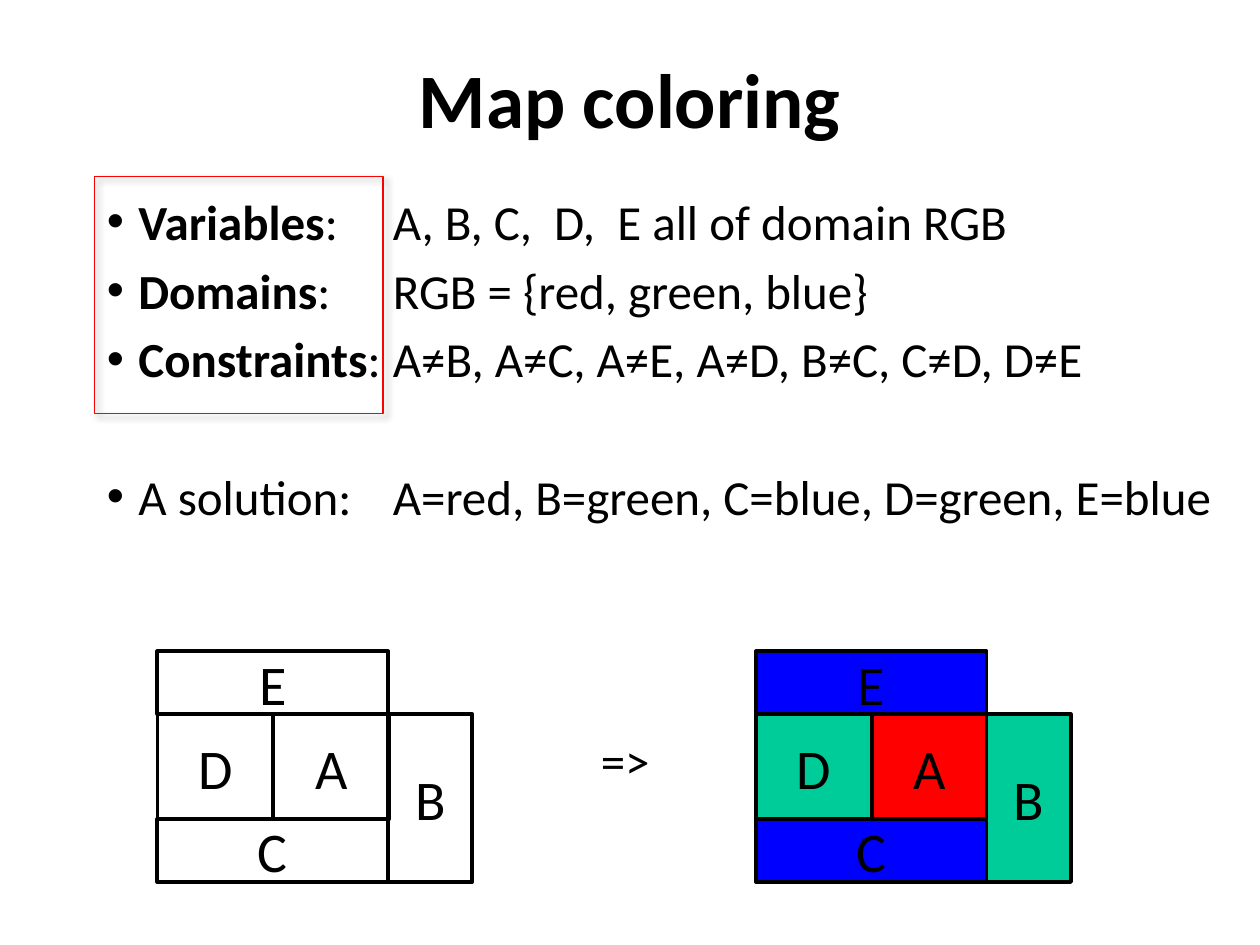
from lxml.etree import SubElement
from pptx import Presentation
from pptx.dml.color import RGBColor
from pptx.enum.shapes import MSO_SHAPE
from pptx.enum.text import MSO_ANCHOR, PP_ALIGN
from pptx.oxml.ns import qn
from pptx.util import Inches, Pt

REGIONS = [
    ("E", 0, 0, 1.83, 0.5),
    ("D", 0, 0.5, 0.92, 0.83),
    ("A", 0.92, 0.5, 0.92, 0.83),
    ("C", 0, 1.33, 1.83, 0.5),
    ("B", 1.83, 0.5, 0.67, 1.33),
]
SOLUTION = {"A": "FF0000", "B": "00CC99", "C": "0000FF", "D": "00CC99", "E": "0000FF"}
FACTS = [
    ("Variables", ":", "A, B, C,  D,  E all of domain RGB", 5.6),
    ("Domains", ":", "RGB = {red, green, blue}", 5.6),
    ("Constraints", ":", "A≠B, A≠C, A≠E, A≠D, B≠C, C≠D, D≠E", 5.6),
    ("", "A solution:", "A=red, B=green, C=blue, D=green, E=blue", 45),
]


def color(value):
    """Turn a hex string into a colour."""
    return RGBColor.from_string(value)


def add_run(p, text, size, bold=False):
    """Append one black Calibri run to a paragraph."""
    r = p.add_run()
    r.text = text
    r.font.name = "Calibri"
    r.font.size = Pt(size)
    r.font.bold = bold
    r.font.color.rgb = color("000000")


def add_text_box(s, x, y, w, h, wrap=True):
    """Add an empty text box and return its text frame."""
    tf = s.shapes.add_textbox(Inches(x), Inches(y), Inches(w), Inches(h)).text_frame
    tf.word_wrap = wrap
    return tf


def format_bullet(p):
    """Give a paragraph a hanging bullet and a tab stop for its value."""
    pPr = p._p.get_or_add_pPr()
    pPr.set("marL", str(Inches(0.25)))
    pPr.set("indent", str(Inches(-0.25)))
    SubElement(pPr, qn("a:buFont"), typeface="Arial")
    SubElement(pPr, qn("a:buChar"), char="•")
    tabs = SubElement(pPr, qn("a:tabLst"))
    SubElement(tabs, qn("a:tab"), pos=str(Inches(2.27)), algn="l")


def add_facts(s):
    """Add the bulleted problem definition and its solution."""
    tf = add_text_box(s, 0.75, 1.47, 9.11, 4.5)
    for i, (term, label, value, space) in enumerate(FACTS):
        p = tf.add_paragraph() if i else tf.paragraphs[0]
        p.space_before = Pt(space)
        format_bullet(p)
        if term:
            add_run(p, term, 28, bold=True)
        add_run(p, f"{label}\t{value}", 28)


def add_rect(shapes, x, y, w, h, line, width, fill=None):
    """Add an outlined rectangle, hollow unless a fill is given."""
    sp = shapes.add_shape(MSO_SHAPE.RECTANGLE, Inches(x), Inches(y), Inches(w), Inches(h))
    sp.shadow.inherit = False
    sp.line.color.rgb = color(line)
    sp.line.width = Pt(width)
    if fill:
        sp.fill.solid()
        sp.fill.fore_color.rgb = color(fill)
    else:
        sp.fill.background()
    return sp


def add_map(s, left, top, fills):
    """Add the five-region map as a group."""
    group = s.shapes.add_group_shape()
    for name, x, y, w, h in REGIONS:
        sp = add_rect(group.shapes, left + x, top + y, w, h, "000000", 2.25, fills.get(name))
        tf = sp.text_frame
        tf.word_wrap = False
        tf.vertical_anchor = MSO_ANCHOR.MIDDLE
        p = tf.paragraphs[0]
        p.alignment = PP_ALIGN.CENTER
        add_run(p, name, 32)


def add_shadow(sp):
    """Give a shape a soft outer shadow to the lower right."""
    effects = sp._element.spPr.find(qn("a:effectLst"))
    shadow = SubElement(effects, qn("a:outerShdw"), blurRad=str(Pt(4)), dist=str(Pt(3)),
                        dir="2700000", algn="tl", rotWithShape="0")
    black = SubElement(shadow, qn("a:srgbClr"), val="000000")
    SubElement(black, qn("a:alpha"), val="40000")


def main():
    """Build the map coloring slide."""
    prs = Presentation()
    prs.slide_width, prs.slide_height = Inches(10), Inches(7.5)
    s = prs.slides.add_slide(prs.slide_layouts[6])

    title = add_text_box(s, 0.75, 0.15, 8.5, 1.25)
    title.vertical_anchor = MSO_ANCHOR.MIDDLE
    title.paragraphs[0].alignment = PP_ALIGN.CENTER
    add_run(title.paragraphs[0], "Map coloring", 44, bold=True)

    add_facts(s)
    add_map(s, 1.25, 5.17, {})
    add_map(s, 6, 5.17, SOLUTION)
    arrow = add_text_box(s, 4.67, 5.75, 0.59, 0.57, wrap=False)
    add_run(arrow.paragraphs[0], "=>", 28)
    add_shadow(add_rect(s.shapes, 0.75, 1.4, 2.29, 1.88, "FF0000", 0.75))

    prs.save("out.pptx")


if __name__ == "__main__":
    main()
